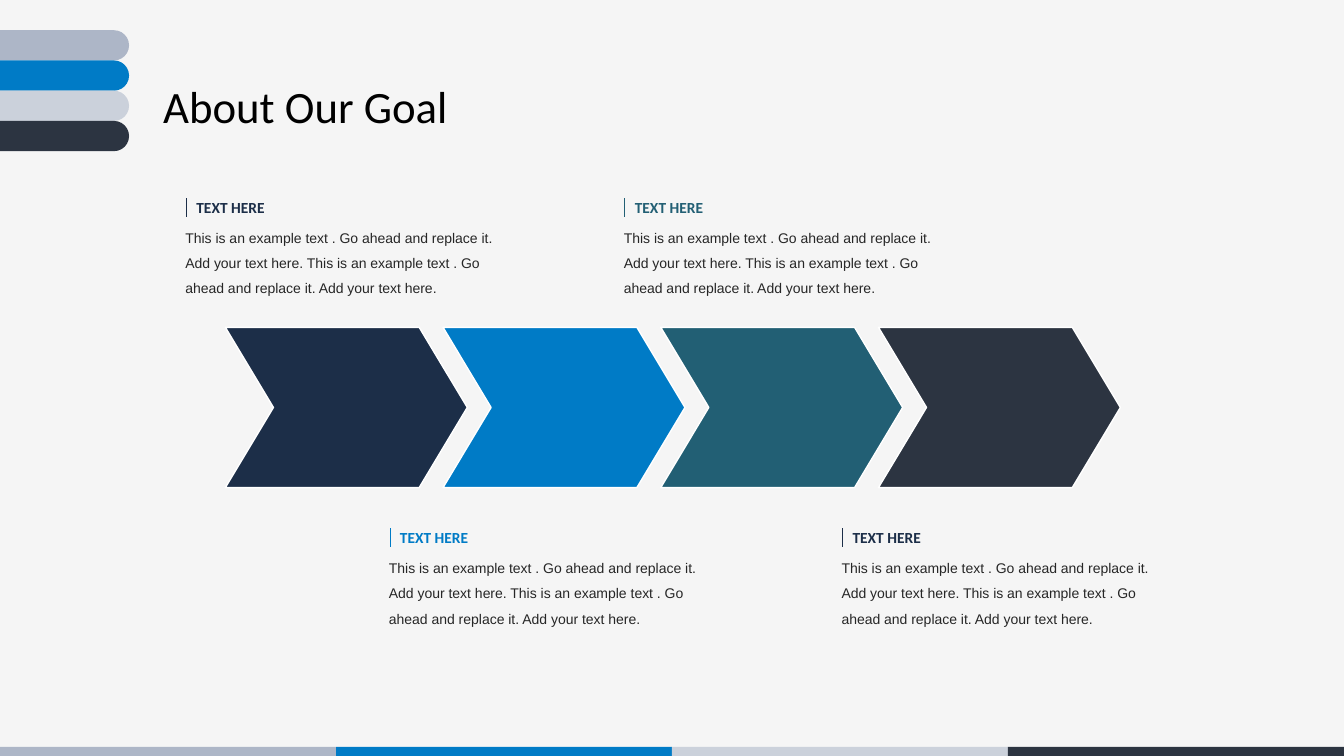
"""Build the "About Our Goal" slide: four chevrons with four captions."""
from lxml import etree
from pptx import Presentation
from pptx.dml.color import RGBColor
from pptx.enum.shapes import MSO_CONNECTOR, MSO_SHAPE as SHAPE
from pptx.enum.text import MSO_AUTO_SIZE as AUTO_SIZE
from pptx.oxml.ns import qn
from pptx.util import Pt

NAVY, BLUE, TEAL, DARK = "1C2E48", "007BC6", "225F74", "2C3441"
BRAND_COLOURS = ["ADB6C7", BLUE, "CBD1DB", DARK]
CHEVRON_COLOURS = [NAVY, BLUE, TEAL, DARK]
BODY = ("This is an example text . Go ahead and replace it. Add your text here. "
        "This is an example text . Go ahead and replace it. Add your text here.")
CAPTIONS = [(270.7, 390.2, BLUE), (594, 390.2, NAVY),
            (125.3, 154.3, NAVY), (438.5, 154.3, TEAL)]

deck = Presentation()
deck.slide_width, deck.slide_height = Pt(960), Pt(540)
page = deck.slides.add_slide(deck.slide_layouts[6])
page.background.fill.solid()
page.background.fill.fore_color.rgb = RGBColor.from_string("F5F5F5")


def add_block(kind, left, top, width, height, colour):
    """Add a filled shape without outline or shadow."""
    block = page.shapes.add_shape(kind, Pt(left), Pt(top), Pt(width), Pt(height))
    block.shadow.inherit = False
    block.fill.solid()
    block.fill.fore_color.rgb = RGBColor.from_string(colour)
    block.line.fill.background()
    return block


def add_text(text, left, top, width, height, font, size, colour, wrap=False):
    """Add a text box and return its only paragraph."""
    box = page.shapes.add_textbox(Pt(left), Pt(top), Pt(width), Pt(height))
    box.text_frame.word_wrap = wrap
    box.text_frame.auto_size = AUTO_SIZE.SHAPE_TO_FIT_TEXT
    para = box.text_frame.paragraphs[0]
    para.text = text
    span = para.runs[0]
    span.font.name, span.font.size = font, Pt(size)
    span.font.color.rgb = RGBColor.from_string(colour)
    return para


for index, colour in enumerate(BRAND_COLOURS):
    add_block(SHAPE.RECTANGLE, 240 * index, 533.5, 240, 8.6, colour)
    pill = add_block(SHAPE.ROUNDED_RECTANGLE, -44.6, 21.6 * (index + 1), 136.8, 21.6, colour)
    pill.adjustments[0] = 0.5

add_text("About Our Goal", 109.5, 52.6, 220.3, 46.1, "Calibri", 32, "000000")

for index, colour in enumerate(CHEVRON_COLOURS):
    chevron = add_block(SHAPE.CHEVRON, 161 + 155.5 * index, 233.8, 172.8, 114.5, colour)
    chevron.adjustments[0] = 0.3
    chevron.line.color.rgb = RGBColor.from_string("FFFFFF")
    chevron.line.width = Pt(1)

for left, top, colour in CAPTIONS:
    body = add_text(BODY, left, top, 240, 65, "Arial", 10, "262626", wrap=True)
    body.line_spacing = 1.5
    heading = add_text("TEXT HERE", left + 7.9, top - 16.3, 64, 20.6, "Calibri", 11, colour)
    heading.runs[0].font.bold = True
    rule = page.shapes.add_connector(MSO_CONNECTOR.STRAIGHT, Pt(left + 7.9), Pt(top - 12.7),
                                     Pt(left + 7.9), Pt(top + 0.7))
    rule.line.color.rgb = RGBColor.from_string(colour)
    rule.line.width = Pt(0.75)
    etree.SubElement(rule._element.spPr, qn("a:effectLst"))

deck.save("out.pptx")
